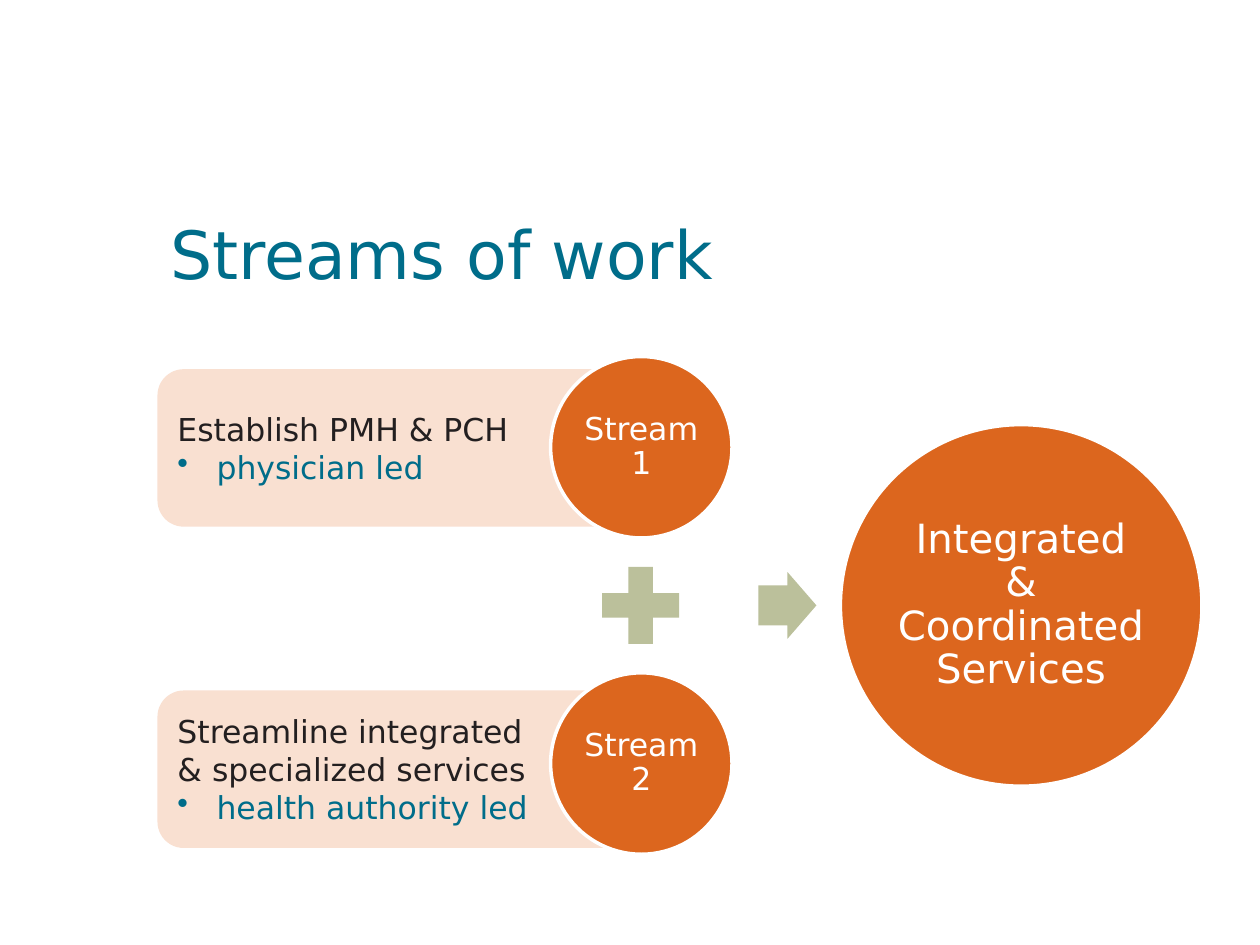
from lxml.etree import SubElement
from pptx import Presentation
from pptx.dml.color import RGBColor
from pptx.enum.shapes import MSO_SHAPE
from pptx.enum.text import MSO_ANCHOR, PP_ALIGN
from pptx.oxml.ns import qn
from pptx.util import Inches, Pt

FONT = "DejaVu Sans"
TEAL, INK, WHITE = "006D8A", "231F20", "FFFFFF"
ORANGE, PEACH, SAGE = "DC661E", "F9E0D1", "BBC09B"


def paint(target, color):
    """Give a fill, line or font a solid colour."""
    if hasattr(target, "solid"):
        target.solid()
        target.fore_color.rgb = RGBColor.from_string(color)
    else:
        target.color.rgb = RGBColor.from_string(color)


def write(para, text, size=18, color=INK, align=PP_ALIGN.LEFT, spacing=None, bullet=None):
    """Fill a paragraph with formatted text."""
    para.text = text
    para.alignment = align
    para.line_spacing = spacing
    if bullet:
        props = para._p.get_or_add_pPr()
        props.set("marL", str(Inches(0.31)))
        props.set("indent", str(-Inches(0.31)))
        SubElement(props, qn("a:buChar")).set("char", bullet)
    for run in para.runs:
        run.font.name = FONT
        run.font.size = Pt(size)
        paint(run.font, color)


def draw(slide, kind, box, color, edge=None):
    """Add a flat preset shape in a box given in inches."""
    shape = slide.shapes.add_shape(kind, *map(Inches, box))
    shape.shadow.inherit = False
    paint(shape.fill, color)
    if edge:
        paint(shape.line, edge)
        shape.line.width = Pt(2)
    else:
        shape.line.fill.background()
    return shape


def disc(slide, box, text, size):
    """Add an orange circle with a centred label."""
    frame = draw(slide, MSO_SHAPE.OVAL, box, ORANGE, WHITE).text_frame
    frame.word_wrap = True
    frame.vertical_anchor = MSO_ANCHOR.MIDDLE
    frame.margin_left = frame.margin_right = Inches(0.03)
    frame.margin_top = frame.margin_bottom = Inches(0.03)
    write(frame.paragraphs[0], text, size, WHITE, PP_ALIGN.CENTER, 0.9)


def stream(slide, card, circle, label, work, lead):
    """Add one stream: its card of work and its circle."""
    frame = draw(slide, MSO_SHAPE.ROUNDED_RECTANGLE, card, PEACH).text_frame
    frame.word_wrap = True
    frame.vertical_anchor = MSO_ANCHOR.MIDDLE
    write(frame.paragraphs[0], work)
    write(frame.add_paragraph(), lead, color=TEAL, bullet="•")
    disc(slide, circle, label, 18)


def heading(slide, box, text):
    """Place and format the slide title."""
    title = slide.shapes.title
    title.left, title.top, title.width, title.height = map(Inches, box)
    title.text_frame.vertical_anchor = MSO_ANCHOR.MIDDLE
    write(title.text_frame.paragraphs[0], text, 38, TEAL)


def result(slide, arrow, circle, text):
    """Add the arrow and the large circle it leads to."""
    shape = draw(slide, MSO_SHAPE.RIGHT_ARROW, arrow, SAGE)
    shape.adjustments[0] = 0.6
    shape.adjustments[1] = 0.5
    disc(slide, circle, text, 23)


def main():
    """Build and save the slide."""
    deck = Presentation()
    deck.slide_width, deck.slide_height = Inches(10), Inches(7.5)
    slide = deck.slides.add_slide(deck.slide_layouts[5])
    heading(slide, (1.25, 1.42, 8.58, 1.17), "Streams of work")
    streams = [
        (2.93, 2.83, "Stream 1", "Establish PMH & PCH", "physician led"),
        (5.48, 5.34, "Stream 2", "Streamline integrated\v& specialized services",
         "health authority led"),
    ]
    for top, rise, *texts in streams:
        stream(slide, (1.25, top, 3.83, 1.25), (4.37, rise, 1.44, 1.44), *texts)
    draw(slide, MSO_SHAPE.MATH_PLUS, (4.67, 4.39, 0.83, 0.83), SAGE)
    result(slide, (6.02, 4.54, 0.46, 0.53), (6.67, 3.37, 2.87, 2.87),
           "Integrated & Coordinated Services")
    deck.save("out.pptx")


if __name__ == "__main__":
    main()
